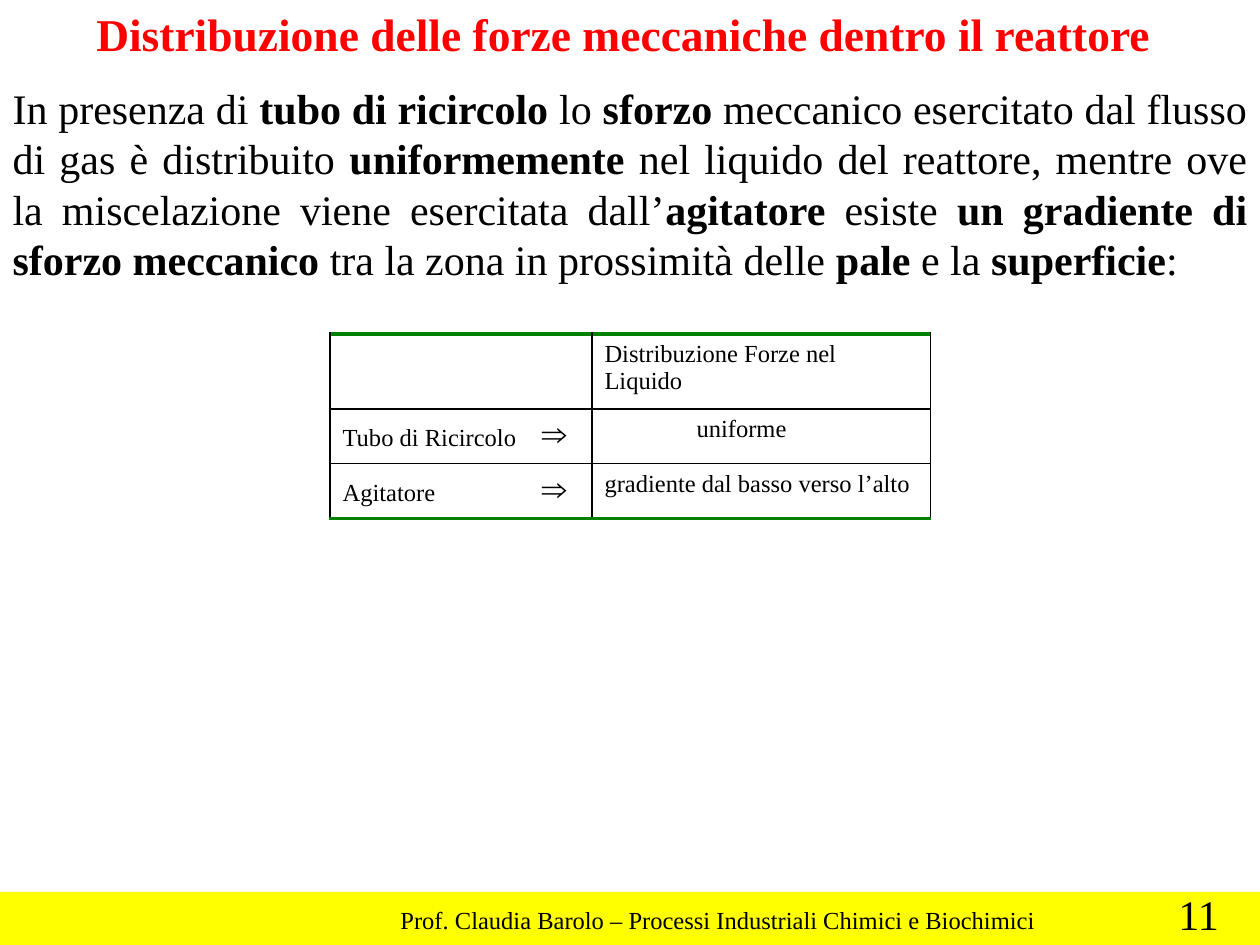
"""Builds the slide on mechanical forces inside the reactor."""
from dataclasses import dataclass

from lxml import etree
from pptx import Presentation
from pptx import util as u
from pptx.dml.color import RGBColor
from pptx.enum import shapes, text
from pptx.oxml import ns

FONT = "Times New Roman"
BLACK, RED, GREEN, YELLOW = "000000", "FF0000", "008000", "FFFF00"


@dataclass(frozen=True)
class Box:
    """A frame in px."""
    left: int
    top: int
    width: int
    height: int


@dataclass(frozen=True)
class Run:
    """A piece of text with one format."""
    words: str
    size: int = 14
    bold: bool = False
    color: str = BLACK
    font: str = FONT


@dataclass(frozen=True)
class Entry:
    """A table cell: its runs, left margin and tab stop in px."""
    runs: tuple[Run, ...] = ()
    margin: int = 0
    tab: int = 0


@dataclass(frozen=True)
class Edge:
    """A cell border."""
    color: str = BLACK
    points: float = 0.75


def px(length: int) -> u.Emu:
    """Turns px into EMU."""
    return u.Emu(round(length * 914400 / 126))


def rgb(color: str) -> RGBColor:
    """Turns a hex string into a colour."""
    return RGBColor.from_string(color)


def place(shape, box: Box) -> None:
    """Moves a shape to a frame."""
    shape.left, shape.top = px(box.left), px(box.top)
    shape.width, shape.height = px(box.width), px(box.height)


def write(paragraph, runs: tuple[Run, ...]) -> None:
    """Adds formatted runs to a paragraph."""
    for piece in runs:
        run = paragraph.add_run()
        run.text = piece.words
        run.font.name = piece.font
        run.font.size = u.Pt(piece.size)
        run.font.bold = piece.bold
        run.font.color.rgb = rgb(piece.color)


def fill_frame(shape, runs: tuple[Run, ...], align, wrap: bool = False):
    """Writes one top-anchored paragraph into a shape and returns it."""
    frame = shape.text_frame
    frame.auto_size = text.MSO_AUTO_SIZE.NONE
    frame.word_wrap = wrap
    frame.vertical_anchor = text.MSO_ANCHOR.TOP
    paragraph = frame.paragraphs[0]
    paragraph.alignment = align
    paragraph.space_before = u.Pt(0)
    write(paragraph, runs)
    return paragraph


def add_label(slide, box: Box, run: Run) -> None:
    """Adds a one-line text box."""
    label = slide.shapes.add_textbox(0, 0, 0, 0)
    place(label, box)
    fill_frame(label, (run,), text.PP_ALIGN.LEFT)


def set_borders(cell, top: Edge, bottom: Edge) -> None:
    """Draws the four borders of a cell."""
    properties = cell._tc.get_or_add_tcPr()
    sides = {"lnL": Edge(), "lnR": Edge(), "lnT": top, "lnB": bottom}
    for position, (tag, edge) in enumerate(sides.items()):
        line = etree.Element(ns.qn(f"a:{tag}"), w=str(u.Pt(edge.points)))
        fill = etree.SubElement(line, ns.qn("a:solidFill"))
        etree.SubElement(fill, ns.qn("a:srgbClr"), val=edge.color)
        properties.insert(position, line)


def add_table(slide, box: Box, columns: list[int], heights: list[int],
              rows: list[tuple[Entry, ...]]) -> None:
    """Adds the table of force distributions."""
    table = slide.shapes.add_table(
        len(rows), len(columns), px(box.left), px(box.top),
        px(box.width), px(box.height)).table
    table.first_row = table.horz_banding = False
    for column, width in zip(table.columns, columns):
        column.width = px(width)
    edges = [Edge(GREEN, 2), *[Edge()] * (len(rows) - 1), Edge(GREEN, 2)]
    for r, (row, height) in enumerate(zip(rows, heights)):
        table.rows[r].height = px(height)
        for c, entry in enumerate(row):
            cell = table.cell(r, c)
            cell.fill.background()
            set_borders(cell, edges[r], edges[r + 1])
            paragraph = cell.text_frame.paragraphs[0]
            write(paragraph, entry.runs)
            properties = paragraph._p.get_or_add_pPr()
            if entry.margin:
                properties.set("marL", str(px(entry.margin)))
            if entry.tab:
                stops = etree.SubElement(properties, ns.qn("a:tabLst"))
                etree.SubElement(stops, ns.qn("a:tab"), pos=str(px(entry.tab)), algn="l")


def with_arrow(words: str) -> Entry:
    """Makes a row heading followed by an arrow."""
    return Entry((Run(words + "\t"), Run("⇒", 20, font="Arial")), tab=199)


def main() -> None:
    """Builds and saves the slide."""
    deck = Presentation()
    deck.slide_width, deck.slide_height = px(1260), px(945)
    slide = deck.slides.add_slide(deck.slide_layouts[1])

    band = slide.shapes.add_shape(shapes.MSO_SHAPE.RECTANGLE, 0, 0, 0, 0)
    place(band, Box(0, 892, 1260, 53))
    band.shadow.inherit = False
    band.fill.solid()
    band.fill.fore_color.rgb = rgb(YELLOW)
    band.line.fill.background()
    add_label(slide, Box(388, 899, 672, 43),
              Run("Prof. Claudia Barolo – Processi Industriali Chimici e Biochimici"))
    add_label(slide, Box(1166, 882, 67, 61), Run("11", 24))

    title, body = slide.placeholders
    place(title, Box(54, 0, 1140, 67))
    heading = "Distribuzione delle forze meccaniche dentro il reattore"
    fill_frame(title, (Run(heading, 26, True, RED),), text.PP_ALIGN.CENTER)

    place(body, Box(0, 76, 1260, 214))
    phrases = (
        "In presenza di ", "tubo di ricircolo", " lo ", "sforzo",
        " meccanico esercitato dal flusso di gas è distribuito ", "uniformemente",
        " nel liquido del reattore, mentre ove la miscelazione viene esercitata dall’",
        "agitatore", " esiste ", "un gradiente di sforzo meccanico",
        " tra la zona in prossimità delle ", "pale", " e la ", "superficie", ":")
    runs = tuple(Run(words, 24, i % 2 == 1) for i, words in enumerate(phrases))
    paragraph = fill_frame(body, runs, text.PP_ALIGN.JUSTIFY, wrap=True)
    properties = paragraph._p.get_or_add_pPr()
    properties.set("marL", "0")
    properties.set("indent", "0")
    etree.SubElement(properties, ns.qn("a:buNone"))

    add_table(slide, Box(330, 334, 601, 185), [262, 339], [75, 55, 55], [
        (Entry(), Entry((Run("Distribuzione Forze nel Liquido"),))),
        (with_arrow("Tubo di Ricircolo"), Entry((Run("uniforme"),), margin=92)),
        (with_arrow("Agitatore"), Entry((Run("gradiente dal basso verso l’alto"),))),
    ])
    deck.save("out.pptx")


if __name__ == "__main__":
    main()
